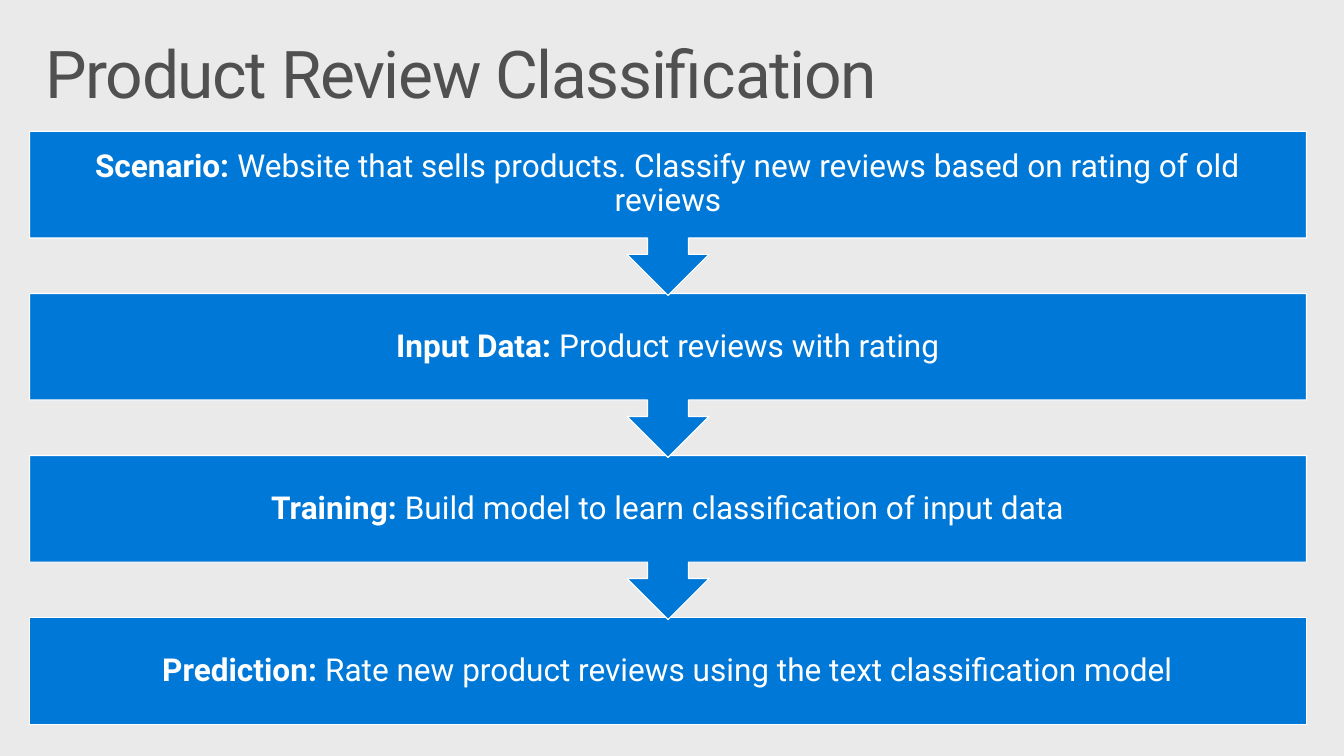
from dataclasses import dataclass

from pptx import Presentation
from pptx.dml.color import RGBColor as Rgb
from pptx.enum.shapes import MSO_SHAPE as Shape
from pptx.enum.text import MSO_ANCHOR as Anchor, PP_ALIGN as Align
from pptx.util import Inches, Pt


@dataclass(frozen=True)
class Theme:
    back: Rgb = Rgb.from_string("EAEAEA")
    ink: Rgb = Rgb.from_string("505050")
    blue: Rgb = Rgb.from_string("0078D7")
    white: Rgb = Rgb.from_string("FFFFFF")
    face: str = "Roboto"
    head: int = 48
    body: int = 23
    edge: float = 0.85


class Deck:
    def __init__(self, theme, wide, high):
        self.theme = theme
        self.prs = Presentation()
        self.prs.slide_width = Inches(wide)
        self.prs.slide_height = Inches(high)
        self.slide = self.prs.slides.add_slide(self.prs.slide_layouts[6])
        fill = self.slide.background.fill
        fill.solid()
        fill.fore_color.rgb = theme.back

    def frame(self, shape, side, top, anchor):
        """Set wrapping and insets, and return the text frame."""
        frame = shape.text_frame
        frame.word_wrap = True
        frame.vertical_anchor = anchor
        frame.margin_left = frame.margin_right = Inches(side)
        frame.margin_top = frame.margin_bottom = Inches(top)
        return frame

    def style(self, para, size, color, align):
        para.alignment = align
        para.line_spacing = 0.9
        font = para.font
        font.name, font.size = self.theme.face, Pt(size)
        font.color.rgb = color

    def title(self, text, *area):
        box = self.slide.shapes.add_textbox(*map(Inches, area))
        para = self.frame(box, 0.16, 0.1, Anchor.TOP).paragraphs[0]
        run = para.add_run()
        run.text = text
        # Tighten letters by one point
        run._r.get_or_add_rPr().set("spc", "-100")
        self.style(para, self.theme.head, self.theme.ink, Align.LEFT)

    def step(self, kind, label, text, *area):
        theme = self.theme
        shape = self.slide.shapes.add_shape(kind, *map(Inches, area))
        shape.shadow.inherit = False
        shape.fill.solid()
        shape.fill.fore_color.rgb = theme.blue
        shape.line.color.rgb = theme.white
        shape.line.width = Pt(theme.edge)
        para = self.frame(shape, 0.18, 0.18, Anchor.MIDDLE).paragraphs[0]
        for part, bold in ((label, True), (" " + text, False)):
            run = para.add_run()
            run.text = part
            run.font.bold = bold
        self.style(para, theme.body, theme.white, Align.CENTER)


STEPS = [
    ("Scenario:", "Website that sells products. Classify new reviews "
                  "based on rating of old reviews"),
    ("Input Data:", "Product reviews with rating"),
    ("Training:", "Build model to learn classification of input data"),
    ("Prediction:", "Rate new product reviews using the text "
                    "classification model"),
]
LEFT, TOP, WIDE, PITCH = 0.3, 1.33, 12.92, 1.64
BOX, CALL = 1.08, 1.66  # height without and with the arrow


def main():
    deck = Deck(Theme(), 13.6, 7.65)

    # Heading
    deck.title("Product Review Classification", LEFT, 0.32, 13, 1)

    # Steps, last one first so that each arrow overlaps the next box
    last = len(STEPS) - 1
    for i, (label, text) in reversed(list(enumerate(STEPS))):
        kind, high = ((Shape.RECTANGLE, BOX) if i == last
                      else (Shape.DOWN_ARROW_CALLOUT, CALL))
        deck.step(kind, label, text, LEFT, TOP + i * PITCH, WIDE, high)

    deck.prs.save("out.pptx")


if __name__ == "__main__":
    main()
